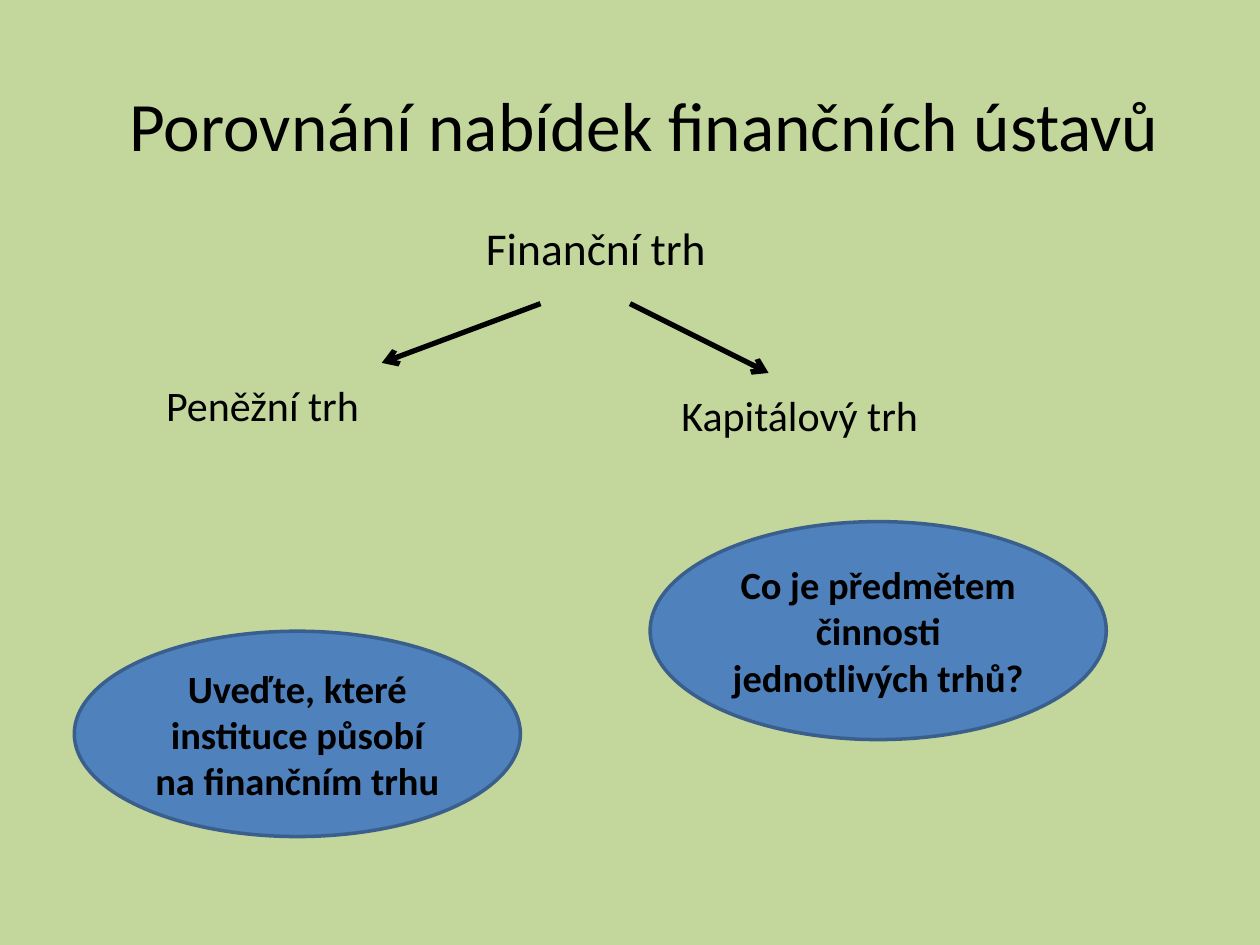
from lxml import etree
from pptx import Presentation
from pptx.dml.color import RGBColor
from pptx.enum.shapes import MSO_CONNECTOR, MSO_SHAPE
from pptx.enum.text import MSO_ANCHOR, PP_ALIGN
from pptx.oxml.ns import qn
from pptx.util import Inches, Pt

BACKGROUND = RGBColor(0xC3, 0xD6, 0x9B)
BLUE = RGBColor(0x4F, 0x81, 0xBD)
DARK_BLUE = RGBColor(0x3A, 0x5F, 0x8C)
BLACK = RGBColor(0, 0, 0)


def place(sp, left, top, width, height):
    sp.left, sp.top = Inches(left), Inches(top)
    sp.width, sp.height = Inches(width), Inches(height)


def write(sp, text, size, align=PP_ALIGN.CENTER, anchor=MSO_ANCHOR.MIDDLE, bold=False):
    tf = sp.text_frame
    tf.word_wrap = True
    tf.vertical_anchor = anchor
    tf.text = text
    p = tf.paragraphs[0]
    p.alignment = align
    font = p.runs[0].font
    font.name = "Calibri"
    font.size = Pt(size)
    font.bold = bold
    font.color.rgb = BLACK


def add_title(s, text):
    title = s.shapes.title
    place(title, 0.83, 0.36, 8.57, 1.25)
    write(title, text, 39.6)


def add_label(s, text, box, size, align=PP_ALIGN.LEFT):
    sp = s.shapes.add_textbox(*map(Inches, box))
    write(sp, text, size, align, MSO_ANCHOR.TOP)


def add_question(s, text, box):
    sp = s.shapes.add_shape(MSO_SHAPE.OVAL, *map(Inches, box))
    sp.shadow.inherit = False
    sp.fill.solid()
    sp.fill.fore_color.rgb = BLUE
    sp.line.color.rgb = DARK_BLUE
    sp.line.width = Pt(2)
    write(sp, text, 22, bold=True)


def add_arrow(s, start, end):
    line = s.shapes.add_connector(MSO_CONNECTOR.STRAIGHT, *map(Inches, start + end))
    line.line.color.rgb = BLACK
    line.line.width = Pt(3)
    etree.SubElement(line.line._get_or_add_ln(), qn("a:tailEnd"), type="arrow")
    etree.SubElement(line._element.spPr, qn("a:effectLst"))


def main():
    prs = Presentation()
    prs.slide_width, prs.slide_height = Inches(10), Inches(7.5)
    s = prs.slides.add_slide(prs.slide_layouts[5])
    s.background.fill.solid()
    s.background.fill.fore_color.rgb = BACKGROUND

    add_title(s, "Porovnání nabídek finančních ústavů")
    add_question(s, "Uveďte, které instituce působí na finančním trhu",
                 (0.59, 5.01, 3.54, 1.63))
    add_label(s, "Finanční trh", (3.35, 1.7, 2.76, 0.54), 26, PP_ALIGN.CENTER)
    add_arrow(s, (4.29, 2.41), (3.03, 2.88))
    add_label(s, "Peněžní trh", (1.22, 2.96, 2.91, 0.5), 24)
    add_label(s, "Kapitálový trh", (5.31, 3.04, 2.91, 0.5), 24)
    add_arrow(s, (5, 2.41), (6.1, 2.96))
    add_question(s, "Co je předmětem činnosti jednotlivých trhů?",
                 (5.16, 4.14, 3.62, 1.73))
    prs.save("out.pptx")


if __name__ == "__main__":
    main()
